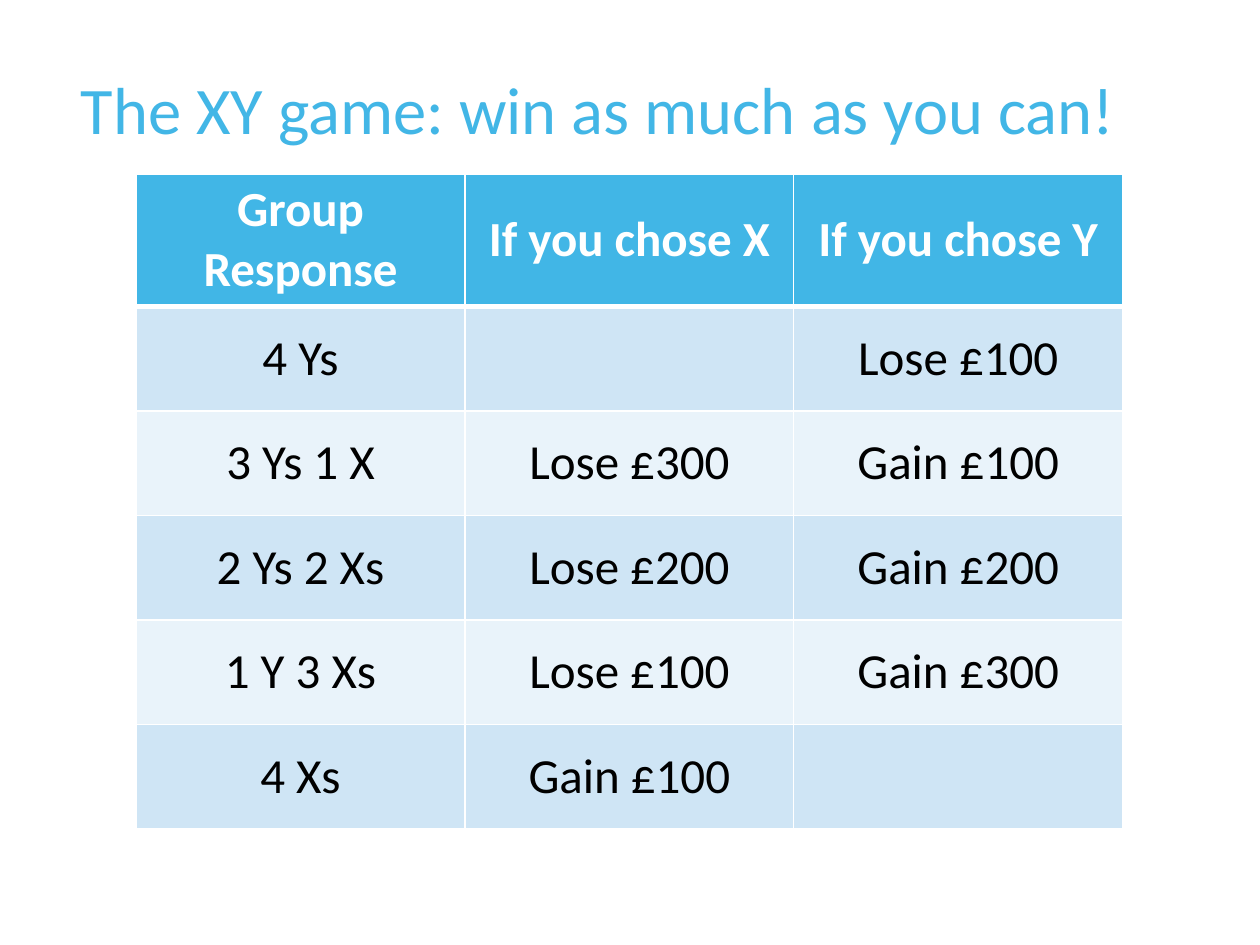
from lxml import etree
from pptx import Presentation
from pptx.dml.color import RGBColor
from pptx.enum.text import MSO_ANCHOR, PP_ALIGN
from pptx.oxml.ns import qn
from pptx.util import Inches, Pt

TOP, MIDDLE = MSO_ANCHOR.TOP, MSO_ANCHOR.MIDDLE
LEFT, CENTER = PP_ALIGN.LEFT, PP_ALIGN.CENTER

FONT = "Calibri"
BLUE, WHITE, BLACK = "41B6E6", "FFFFFF", "000000"
BANDS = ("E9F3FA", "CFE5F5")
COL_WIDTH, HEADER_HEIGHT, ROW_HEIGHT = 2.61, 0.79, 0.83

PAYOFFS = [
    ("Group Response", "If you chose X", "If you chose Y"),
    ("4 Ys", "", "Lose £100"),
    ("3 Ys 1 X", "Lose £300", "Gain £100"),
    ("2 Ys 2 Xs", "Lose £200", "Gain £200"),
    ("1 Y 3 Xs", "Lose £100", "Gain £300"),
    ("4 Xs", "Gain £100", ""),
]


def rgb(color):
    return RGBColor.from_string(color)


def write(tf, text, size, color, bold=False, align=CENTER, spacing=1.0):
    p = tf.paragraphs[0]
    p.alignment, p.line_spacing = align, spacing
    font = p.font
    if text:
        r = p.add_run()
        r.text = text
        font = r.font
    font.name, font.size, font.bold = FONT, Pt(size), bold
    font.color.rgb = rgb(color)


def add_border(cell, side, width, color=WHITE):
    """Add one cell border; side is L, R, T or B, added in that order before the fill."""
    tc_pr = cell._tc.get_or_add_tcPr()
    ln = etree.SubElement(tc_pr, qn(f"a:ln{side}"), w=str(Pt(width)))
    fill = etree.SubElement(ln, qn("a:solidFill"))
    etree.SubElement(fill, qn("a:srgbClr"), val=color)


def add_title(s, text):
    title = s.shapes.title
    title.left, title.top = Inches(0.54), Inches(0.56)
    title.width, title.height = Inches(9.06), Inches(1.03)
    tf = title.text_frame
    tf.word_wrap = True
    tf.vertical_anchor = TOP
    write(tf, text, 38, "42B6E6", align=LEFT, spacing=0.9)


def format_cell(cell, text, row):
    header = row == 0
    for side in "LRTB":
        under_header = (row, side) in ((0, "B"), (1, "T"))
        add_border(cell, side, 3 if under_header else 1)
    cell.fill.solid()
    cell.fill.fore_color.rgb = rgb(BLUE if header else BANDS[row % 2])
    cell.vertical_anchor = MIDDLE
    write(cell.text_frame, text, 28, WHITE if header else BLACK, bold=header)


def add_payoff_table(s, rows):
    n_rows, n_cols = len(rows), len(rows[0])
    table = s.shapes.add_table(n_rows, n_cols, Inches(1.08), Inches(1.38),
                               Inches(n_cols * COL_WIDTH), Inches(5.2)).table
    for col in table.columns:
        col.width = Inches(COL_WIDTH)
    for i, values in enumerate(rows):
        table.rows[i].height = Inches(ROW_HEIGHT if i else HEADER_HEIGHT)
        for j, text in enumerate(values):
            format_cell(table.cell(i, j), text, i)


def main():
    prs = Presentation()
    prs.slide_width, prs.slide_height = Inches(10), Inches(7.5)
    s = prs.slides.add_slide(prs.slide_layouts[5])
    add_title(s, "The XY game: win as much as you can!")
    add_payoff_table(s, PAYOFFS)
    prs.save("out.pptx")


if __name__ == "__main__":
    main()
